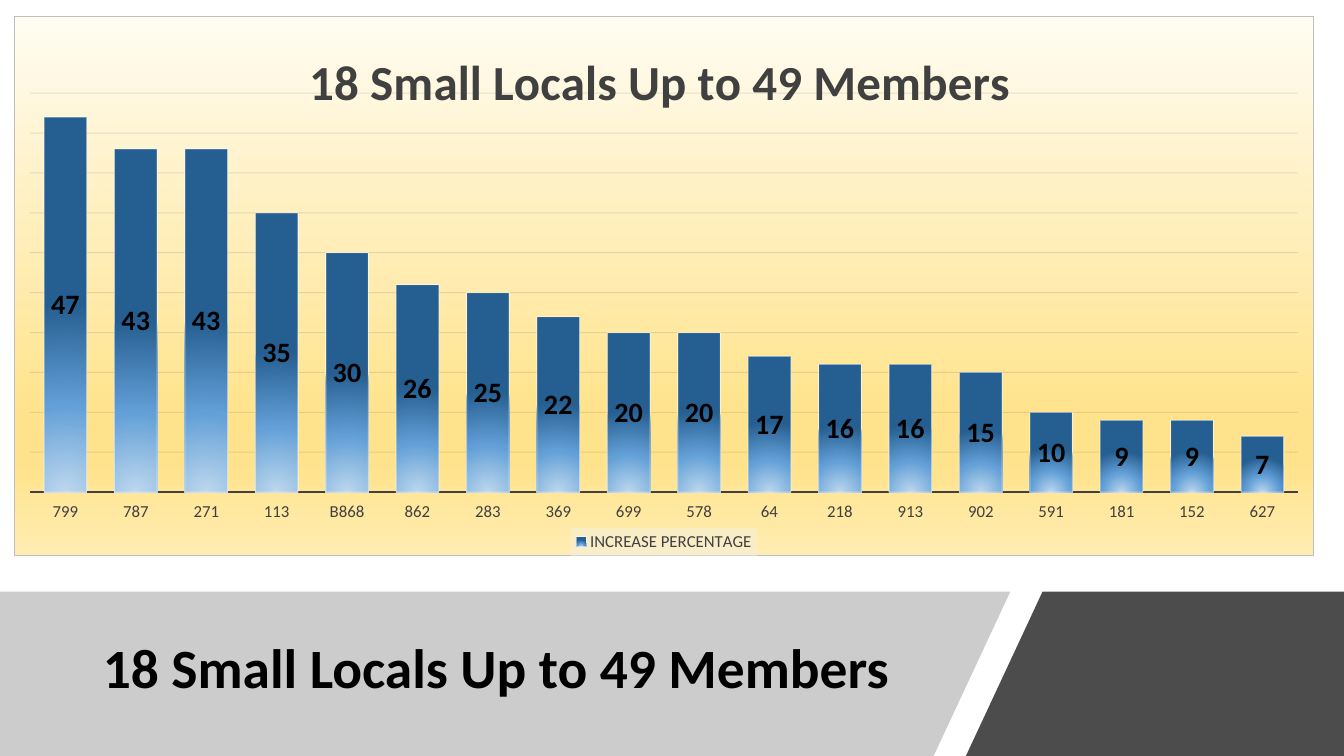
from dataclasses import dataclass

from lxml.etree import SubElement
from pptx import Presentation
from pptx.chart.data import CategoryChartData
from pptx.dml.color import RGBColor
from pptx.enum.chart import (XL_CHART_TYPE, XL_LABEL_POSITION, XL_LEGEND_POSITION,
                             XL_TICK_LABEL_POSITION, XL_TICK_MARK)
from pptx.enum.text import MSO_ANCHOR, MSO_AUTO_SIZE, PP_ALIGN
from pptx.oxml import parse_xml
from pptx.oxml.ns import nsdecls, qn
from pptx.util import Inches, Pt


@dataclass(frozen=True)
class Theme:
    font: str = "Calibri"
    black: str = "000000"
    white: str = "FFFFFF"
    dark: str = "404040"
    grid: str = "0D0D0D"
    band: str = "808080"
    border: str = "BFBFBF"
    legend: str = "F2F2F2"
    backdrop: tuple = ((0, "FFFCF2"), (74, "FFE38C"), (83, "FFE38C"), (100, "FFECB2"))
    columns: tuple = ((0, "BDD7EE"), (46, "63A0D7"), (100, "255E91"))
    heading_size: float = 39.6
    chart_title_size: float = 35
    value_size: float = 20
    axis_size: float = 12
    base_size: float = 10


THEME = Theme()
HEADING = "18 Small Locals Up to 49 Members"
INCREASES = [
    ("799", 47), ("787", 43), ("271", 43), ("113", 35), ("B868", 30), ("862", 26),
    ("283", 25), ("369", 22), ("699", 20), ("578", 20), ("64", 17), ("218", 16),
    ("913", 16), ("902", 15), ("591", 10), ("181", 9), ("152", 9), ("627", 7),
]
LINEAR = '<a:lin ang="5400000" scaled="0"/>'
CIRCULAR = ('<a:path path="circle"><a:fillToRect l="50000" t="130000" r="50000" '
            'b="-30000"/></a:path>')


def style_font(font, size, color, bold=False):
    font.name = THEME.font
    font.size = Pt(size)
    font.bold = bold
    font.color.rgb = RGBColor.from_string(color)


def write_text(frame, text, size, color, bold=False, align=PP_ALIGN.LEFT, spacing=None):
    paragraph = frame.paragraphs[0]
    paragraph.alignment = align
    paragraph.line_spacing = spacing
    run = paragraph.add_run()
    run.text = text
    style_font(run.font, size, color, bold)


def set_opacity(owner, percent):
    for color in owner.iter(qn("a:srgbClr")):
        SubElement(color, qn("a:alpha")).set("val", str(percent * 1000))


def style_line(line, color, width, opacity=100):
    line.width = Pt(width)
    line.color.rgb = RGBColor.from_string(color)
    if opacity < 100:
        set_opacity(line._ln, opacity)


def gradient_xml(stops, direction):
    marks = "".join(f'<a:gs pos="{position * 1000}"><a:srgbClr val="{color}"/></a:gs>'
                    for position, color in stops)
    return (f'<a:gradFill {nsdecls("a")} rotWithShape="1"><a:gsLst>{marks}</a:gsLst>'
            f'{direction}</a:gradFill>')


def set_panel(owner, content):
    panel = parse_xml(f'<c:spPr {nsdecls("c", "a")}>{content}</c:spPr>')
    owner.find(qn("c:txPr")).addprevious(panel)


def place_part(owner, index, target="", **fractions):
    for old in owner.findall(qn("c:layout")):
        owner.remove(old)
    modes = "".join(f'<c:{key}Mode val="edge"/>' for key in ("x", "y"))
    sizes = "".join(f'<c:{key} val="{value}"/>' for key, value in fractions.items())
    owner.insert(index, parse_xml(
        f'<c:layout {nsdecls("c")}><c:manualLayout>{target}{modes}{sizes}'
        '</c:manualLayout></c:layout>'))


def add_band(slide, corners, color, opacity):
    points = [(Inches(x), Inches(y)) for x, y in corners]
    builder = slide.shapes.build_freeform(*points[0], scale=1.0)
    builder.add_line_segments(points[1:], close=True)
    band = builder.convert_to_shape()
    band.shadow.inherit = False
    band.line.fill.background()
    band.fill.solid()
    band.fill.fore_color.rgb = RGBColor.from_string(color)
    set_opacity(band._element.spPr, opacity)
    return band


def format_heading(title):
    title.left, title.top = Inches(0.92), Inches(6.05)
    title.width, title.height = Inches(8.44), Inches(1.2)
    frame = title.text_frame
    frame.word_wrap = True
    frame.auto_size = MSO_AUTO_SIZE.NONE
    frame.vertical_anchor = MSO_ANCHOR.MIDDLE
    write_text(frame, HEADING, THEME.heading_size, THEME.black, bold=True, spacing=0.9)


def format_axes(chart):
    locals_axis = chart.category_axis
    locals_axis.major_tick_mark = XL_TICK_MARK.NONE
    locals_axis.tick_label_position = XL_TICK_LABEL_POSITION.LOW
    style_font(locals_axis.tick_labels.font, THEME.axis_size, THEME.dark)
    style_line(locals_axis.format.line, THEME.dark, 1.5)

    percent_axis = chart.value_axis
    percent_axis.minimum_scale, percent_axis.maximum_scale = 0, 50
    percent_axis.major_unit = 5
    percent_axis.has_major_gridlines = True
    style_line(percent_axis.major_gridlines.format.line, THEME.grid, 0.75, opacity=10)
    percent_axis.visible = False


def format_columns(plot):
    plot.gap_width = 65
    plot.vary_by_categories = False
    increase = plot.series[0]
    increase.invert_if_negative = False
    style_line(increase.format.line, THEME.white, 0.75, opacity=50)
    increase._element.spPr.insert(0, parse_xml(gradient_xml(THEME.columns, CIRCULAR)))
    labels = increase.data_labels
    labels.show_value = True
    labels.position = XL_LABEL_POSITION.CENTER
    labels.number_format = "General"
    labels.number_format_is_linked = False
    style_font(labels.font, THEME.value_size, THEME.black, bold=True)


def format_legend(chart):
    chart.has_legend = True
    legend = chart.legend
    legend.position = XL_LEGEND_POSITION.BOTTOM
    legend.include_in_layout = False
    style_font(legend.font, THEME.axis_size, THEME.dark)
    set_panel(legend._element, f'<a:solidFill><a:srgbClr val="{THEME.legend}">'
              '<a:alpha val="39000"/></a:srgbClr></a:solidFill><a:ln><a:noFill/></a:ln>')


def add_increase_chart(slide):
    increases = CategoryChartData()
    increases.categories = [local for local, _ in INCREASES]
    increases.add_series("INCREASE PERCENTAGE", [percent for _, percent in INCREASES])
    chart = slide.shapes.add_chart(
        XL_CHART_TYPE.COLUMN_CLUSTERED, Inches(0.14), Inches(0.16),
        Inches(12.89), Inches(5.36), increases).chart
    style_font(chart.font, THEME.base_size, THEME.black)
    set_panel(chart._chartSpace, gradient_xml(THEME.backdrop, LINEAR) +
              f'<a:ln w="{Pt(0.75)}"><a:solidFill><a:srgbClr val="{THEME.border}"/>'
              '</a:solidFill></a:ln>')
    chart.has_title = True
    write_text(chart.chart_title.text_frame, HEADING, THEME.chart_title_size,
               THEME.dark, bold=True, align=PP_ALIGN.CENTER)
    place_part(chart.chart_title._element, 1, x=0.22, y=0.04)
    place_part(chart._chartSpace.chart.plotArea, 0, '<c:layoutTarget val="inner"/>',
               x=0.012, y=0.142, w=0.976, h=0.74)
    format_axes(chart)
    format_columns(chart.plots[0])
    format_legend(chart)


def main():
    presentation = Presentation()
    presentation.slide_width, presentation.slide_height = Inches(13.33), Inches(7.5)
    slide = presentation.slides.add_slide(presentation.slide_layouts[5])
    heading = slide.shapes.title
    format_heading(heading)
    heading_band = add_band(slide, [(0, 5.87), (10.02, 5.87), (9.26, 7.5), (0, 7.5)],
                            THEME.band, 40)
    heading._element.addprevious(heading_band._element)
    add_band(slide, [(10.34, 5.87), (13.33, 5.87), (13.33, 7.5), (9.58, 7.5)],
             THEME.black, 70)
    add_increase_chart(slide)
    presentation.save("out.pptx")


if __name__ == "__main__":
    main()
